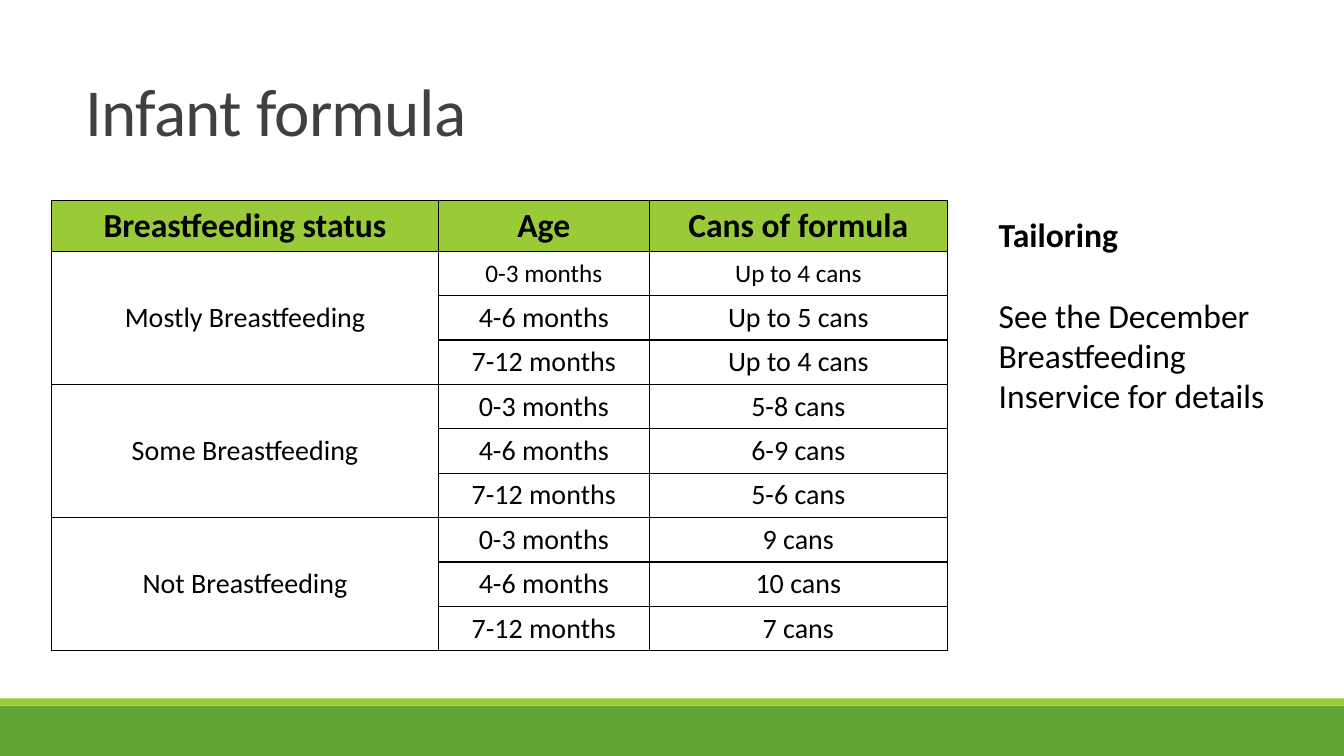
from lxml.etree import SubElement as Sub
from pptx import Presentation
from pptx.dml.color import RGBColor
from pptx.enum.shapes import MSO_SHAPE as Shape
from pptx.enum.text import MSO_ANCHOR as Anchor, MSO_AUTO_SIZE as Fit, PP_ALIGN as Align
from pptx.oxml.ns import qn
from pptx.util import Cm, Pt

BLACK = RGBColor(0x00, 0x00, 0x00)
GRAY = RGBColor(0x40, 0x40, 0x40)
GREEN = RGBColor(0x63, 0xA5, 0x37)
LIME = RGBColor(0x99, 0xCB, 0x38)

WIDE, HIGH = 33.87, 19.05
HEADS = ["Breastfeeding status", "Age", "Cans of formula"]
AGES = ["0-3 months", "4-6 months", "7-12 months"]
GROUPS = {
    "Mostly Breastfeeding": ["Up to 4 cans", "Up to 5 cans", "Up to 4 cans"],
    "Some Breastfeeding": ["5-8 cans", "6-9 cans", "5-6 cans"],
    "Not Breastfeeding": ["9 cans", "10 cans", "7 cans"],
}
COLS = [9.75, 5.31, 7.52]
ROW = 1.11


def write(para, text, size, **extra):
    """Put one run in the paragraph, formatted from a dict of font values."""
    run = para.add_run()
    run.text = text
    look = {"name": "Calibri", "size": Pt(size), "bold": False} | extra
    color = look.pop("color", BLACK)
    for key, value in look.items():
        setattr(run.font, key, value)
    run.font.color.rgb = color
    return run


def frame(cell):
    """Give the cell a thin black line on all four sides."""
    props = cell._tc.get_or_add_tcPr()
    for side in "LRTB":
        line = Sub(props, qn(f"a:ln{side}"), w=str(Pt(1)))
        Sub(Sub(line, qn("a:solidFill")), qn("a:srgbClr"), val=str(BLACK))


def fill_cell(cell, text, size, **extra):
    para = cell.text_frame.paragraphs[0]
    para.alignment = Align.CENTER
    write(para, text, size, **extra)


def add_bands(slide, left, top, width, height):
    thin = 0.18
    bands = [(top + thin, height - thin, GREEN), (top, thin, LIME)]
    for y, tall, color in bands:
        band = slide.shapes.add_shape(Shape.RECTANGLE, Cm(left), Cm(y), Cm(width), Cm(tall))
        band.shadow.inherit = False
        band.fill.solid()
        band.fill.fore_color.rgb = color
        band.line.fill.background()


def add_title(slide, left, top, width, height):
    title = slide.shapes.title
    box = {"left": left, "top": top, "width": width, "height": height}
    for key, value in box.items():
        setattr(title, key, Cm(value))
    body = title.text_frame
    body.auto_size = Fit.NONE
    body.vertical_anchor = Anchor.BOTTOM
    para = body.paragraphs[0]
    para.alignment = Align.LEFT
    para.line_spacing = 0.85
    run = write(para, "Infant formula", 48, color=GRAY)
    run.font._element.set("spc", "-50")


def add_grid(slide, left, top):
    span = len(AGES)
    count = 1 + span * len(GROUPS)
    grid = slide.shapes.add_table(
        count, len(COLS), Cm(left), Cm(top), Cm(sum(COLS)), Cm(ROW * count)).table
    for col, width in zip(grid.columns, COLS):
        col.width = Cm(width)
    for row in grid.rows:
        row.height = Cm(ROW)
    for cell in grid.iter_cells():
        frame(cell)
        cell.fill.background()
        cell.vertical_anchor = Anchor.MIDDLE

    for x, head in enumerate(HEADS):
        cell = grid.cell(0, x)
        cell.fill.solid()
        cell.fill.fore_color.rgb = LIME
        cell.vertical_anchor = Anchor.TOP
        fill_cell(cell, head, 24, bold=True)

    for g, (status, cans) in enumerate(GROUPS.items()):
        first = 1 + g * span
        grid.cell(first, 0).merge(grid.cell(first + span - 1, 0))
        fill_cell(grid.cell(first, 0), status, 20)
        for y, pair in enumerate(zip(AGES, cans), first):
            for x, text in enumerate(pair, 1):
                fill_cell(grid.cell(y, x), text, 18 if y == 1 else 20)


def add_note(slide, left, top, width, height):
    body = slide.shapes.add_textbox(Cm(left), Cm(top), Cm(width), Cm(height)).text_frame
    body.word_wrap = True
    body.auto_size = Fit.SHAPE_TO_FIT_TEXT
    write(body.paragraphs[0], "Tailoring", 24, bold=True)
    para = body.add_paragraph()
    para.space_before = Pt(29)
    write(para, "See the December Breastfeeding Inservice for details", 24)


def main():
    deck = Presentation()
    deck.slide_width, deck.slide_height = Cm(WIDE), Cm(HIGH)
    slide = deck.slides.add_slide(deck.slide_layouts[5])
    add_bands(slide, 0, 17.6, WIDE, HIGH - 17.6)
    add_title(slide, 1.9, 1.57, 27.94, 2.34)
    add_grid(slide, 1.3, 5.05)
    add_note(slide, 24.92, 5.26, 8.43, 5.38)
    deck.save("out.pptx")


if __name__ == "__main__":
    main()
